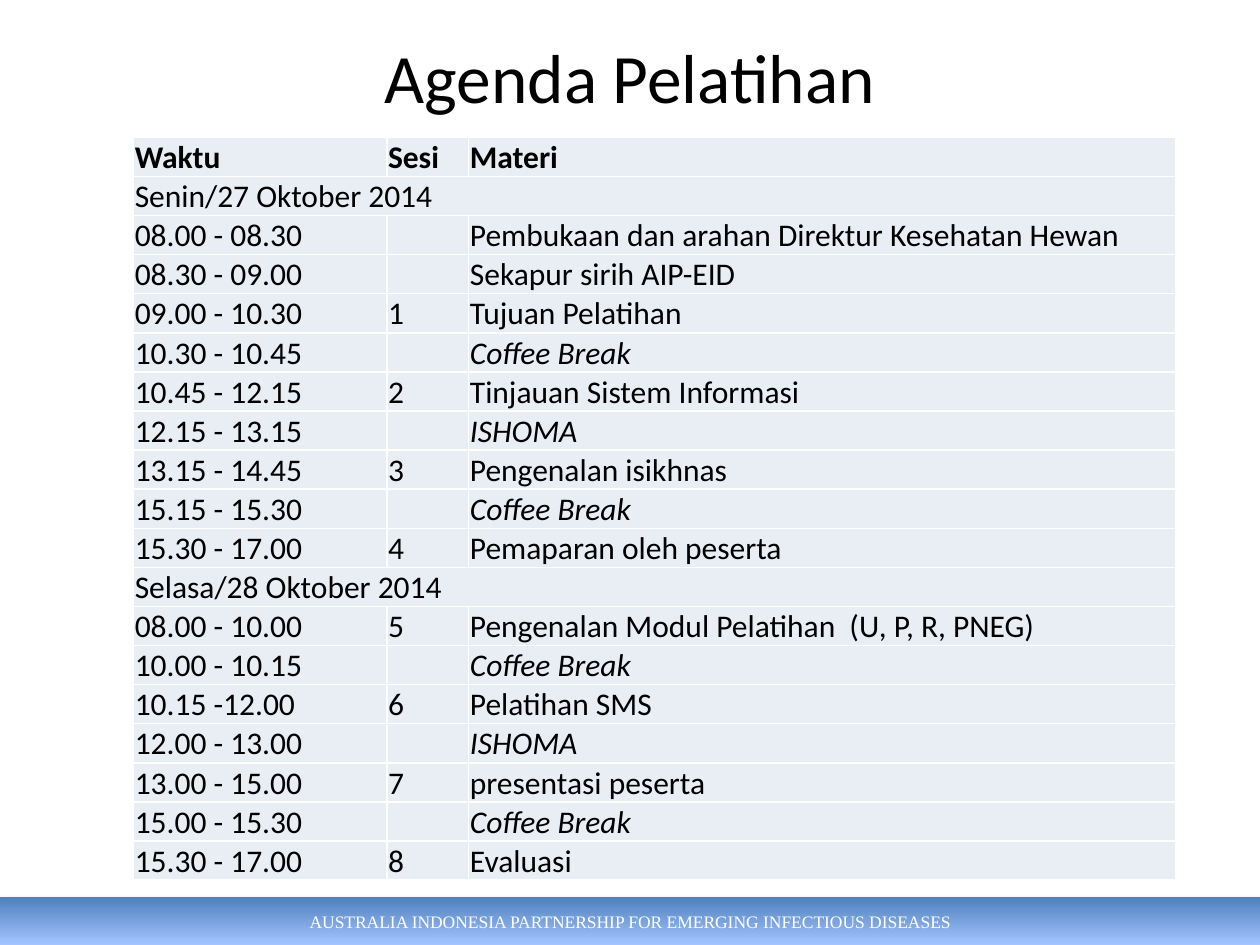
from dataclasses import dataclass

from lxml.etree import SubElement
from pptx import Presentation
from pptx.dml.color import RGBColor
from pptx.enum.shapes import MSO_SHAPE
from pptx.enum.text import MSO_ANCHOR, PP_ALIGN
from pptx.oxml.ns import qn
from pptx.util import Inches, Pt


@dataclass(frozen=True)
class Theme:
    text: str = "000000"
    white: str = "FFFFFF"
    cell: str = "E9EDF4"
    footer_top: str = "4F81BD"
    footer_bottom: str = "A4C4FF"
    shadow: str = "000000"
    body_font: str = "Calibri"
    footer_font: str = "Times New Roman"
    title_size: float = 39.6
    table_size: float = 18
    footer_size: float = 10
    border_width: float = 1


THEME = Theme()
COLUMN_WIDTHS = (2.01, 0.65, 5.61)
BREAKS = ("Coffee Break", "ISHOMA")
AGENDA = [
    ("Waktu", "Sesi", "Materi"),
    ("Senin/27 Oktober 2014",),
    ("08.00 - 08.30", "", "Pembukaan dan arahan Direktur Kesehatan Hewan"),
    ("08.30 - 09.00", "", "Sekapur sirih AIP-EID"),
    ("09.00 - 10.30", "1", "Tujuan Pelatihan"),
    ("10.30 - 10.45", "", "Coffee Break"),
    ("10.45 - 12.15", "2", "Tinjauan Sistem Informasi"),
    ("12.15 - 13.15", "", "ISHOMA"),
    ("13.15 - 14.45", "3", "Pengenalan isikhnas"),
    ("15.15 - 15.30", "", "Coffee Break"),
    ("15.30 - 17.00", "4", "Pemaparan oleh peserta"),
    ("Selasa/28 Oktober 2014",),
    ("08.00 - 10.00", "5", "Pengenalan Modul Pelatihan  (U, P, R, PNEG)"),
    ("10.00 - 10.15", "", "Coffee Break"),
    ("10.15 -12.00", "6", "Pelatihan SMS"),
    ("12.00 - 13.00", "", "ISHOMA"),
    ("13.00 - 15.00", "7", "presentasi peserta"),
    ("15.00 - 15.30", "", "Coffee Break"),
    ("15.30 - 17.00", "8", "Evaluasi"),
]


def write(frame, text, font, size, color, align=PP_ALIGN.LEFT, bold=False, italic=False):
    frame.text = text
    paragraph = frame.paragraphs[0]
    paragraph.alignment = align
    for run in paragraph.runs:
        run.font.name = font
        run.font.size = Pt(size)
        run.font.color.rgb = RGBColor.from_string(color)
        run.font.bold = bold
        run.font.italic = italic


def add_shadow(shape):
    shape.shadow.inherit = False
    effects = shape.element.spPr.find(qn("a:effectLst"))
    shadow = SubElement(effects, qn("a:outerShdw"), blurRad=str(Pt(3.1)),
                        dist=str(Pt(1.8)), dir="5400000", rotWithShape="0")
    color = SubElement(shadow, qn("a:srgbClr"), val=THEME.shadow)
    SubElement(color, qn("a:alpha"), val="35000")


def add_footer(slide, text):
    footer = slide.shapes.add_shape(
        MSO_SHAPE.RECTANGLE, Inches(0), Inches(7.12), Inches(10), Inches(0.38))
    footer.fill.gradient()
    footer.fill.gradient_angle = 270
    for stop, color in zip(footer.fill.gradient_stops,
                           (THEME.footer_top, THEME.footer_bottom)):
        stop.color.rgb = RGBColor.from_string(color)
    footer.line.fill.background()
    add_shadow(footer)
    footer.text_frame.vertical_anchor = MSO_ANCHOR.MIDDLE
    write(footer.text_frame, text, THEME.footer_font, THEME.footer_size,
          THEME.white, PP_ALIGN.CENTER)


def add_title(slide, text):
    title = slide.shapes.add_textbox(Inches(0.5), Inches(0.3), Inches(9), Inches(0.61))
    title.text_frame.word_wrap = True
    title.text_frame.vertical_anchor = MSO_ANCHOR.MIDDLE
    write(title.text_frame, text, THEME.body_font, THEME.title_size,
          THEME.text, PP_ALIGN.CENTER)


def style_cell(cell):
    cell.margin_left = cell.margin_right = cell.margin_top = Inches(0.01)
    cell.margin_bottom = Inches(0)
    properties = cell._tc.get_or_add_tcPr()
    for side in ("a:lnL", "a:lnR", "a:lnT", "a:lnB"):
        border = SubElement(properties, qn(side), w=str(Pt(THEME.border_width)))
        fill = SubElement(border, qn("a:solidFill"))
        SubElement(fill, qn("a:srgbClr"), val=THEME.white)
    cell.fill.solid()
    cell.fill.fore_color.rgb = RGBColor.from_string(THEME.cell)


def add_agenda(slide, entries):
    agenda = slide.shapes.add_table(
        len(entries), len(COLUMN_WIDTHS), Inches(1.06), Inches(1.09),
        Inches(sum(COLUMN_WIDTHS)), Inches(5.88)).table
    for column, width in zip(agenda.columns, COLUMN_WIDTHS):
        column.width = Inches(width)
    for cell in agenda.iter_cells():
        style_cell(cell)
    for row, entry in enumerate(entries):
        if len(entry) == 1:
            agenda.cell(row, 0).merge(agenda.cell(row, len(COLUMN_WIDTHS) - 1))
        for column, text in enumerate(entry):
            write(agenda.cell(row, column).text_frame, text, THEME.body_font,
                  THEME.table_size, THEME.text, bold=row == 0, italic=text in BREAKS)


def main():
    presentation = Presentation()
    presentation.slide_width = Inches(10)
    presentation.slide_height = Inches(7.5)
    slide = presentation.slides.add_slide(presentation.slide_layouts[6])
    add_footer(slide, "AUSTRALIA INDONESIA PARTNERSHIP FOR EMERGING INFECTIOUS DISEASES")
    add_title(slide, "Agenda Pelatihan")
    add_agenda(slide, AGENDA)
    presentation.save("out.pptx")


if __name__ == "__main__":
    main()
